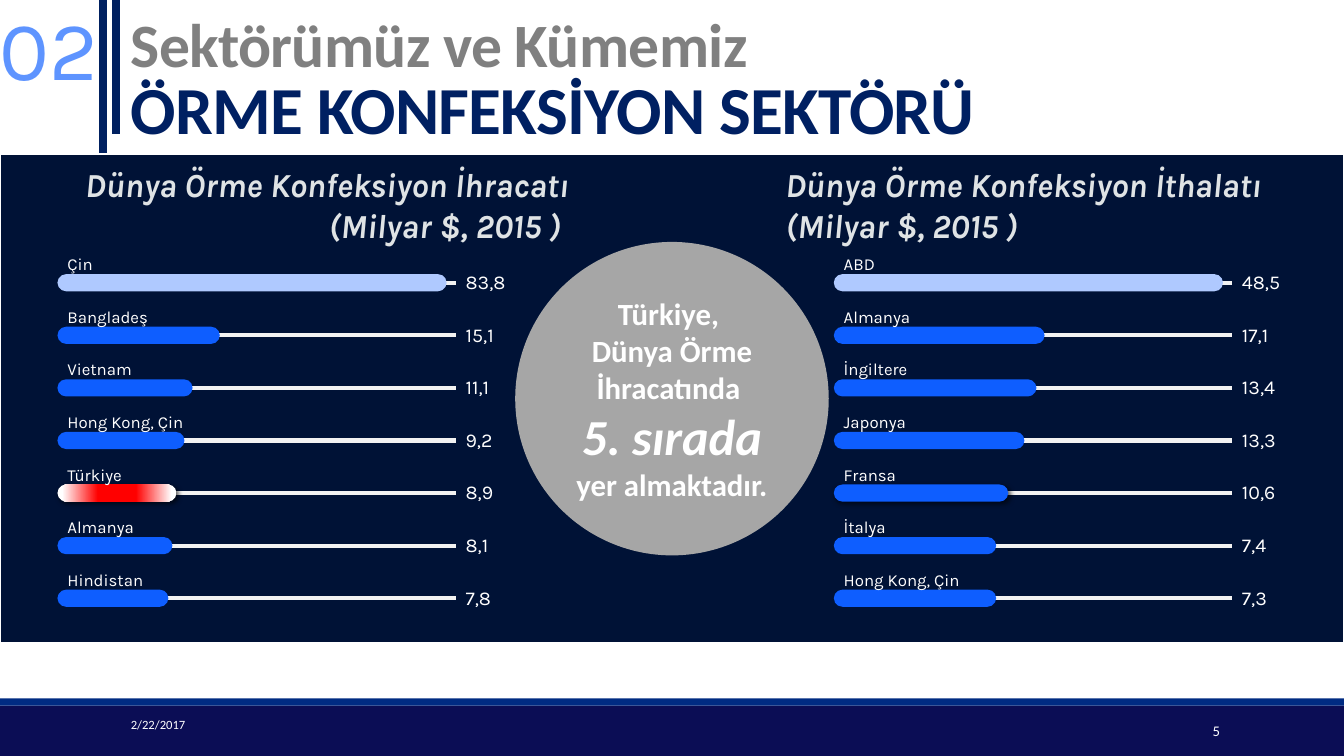
from lxml.etree import SubElement
from pptx import Presentation
from pptx.dml.color import RGBColor
from pptx.enum.shapes import MSO_CONNECTOR, MSO_SHAPE as Preset
from pptx.enum.text import MSO_ANCHOR as Anchor, PP_ALIGN as Align
from pptx.oxml.ns import qn
from pptx.util import Inches, Pt

WHITE, NAVY, BLUE, PALE, RED = "FFFFFF", "002060", "0E5EFF", "AFC9FF", "FF0000"


def color(value):
    return RGBColor.from_string(value)


def add_node(parent, tag, **attributes):
    return SubElement(parent, qn(tag), {key: str(value) for key, value in attributes.items()})


class SlideBuilder:
    body_font = "Calibri"
    chart_font = "Karla"
    row_step = 3.13 / 6
    bar_height = 0.17

    def __init__(self, slide):
        self.slide = slide
        self.canvas = slide.shapes

    def shape(self, preset, box, fill, outline=None):
        figure = self.canvas.add_shape(preset, *map(Inches, box))
        figure.shadow.inherit = False
        figure.fill.solid()
        figure.fill.fore_color.rgb = color(fill)
        if outline:
            figure.line.color.rgb = color(outline)
            figure.line.width = Pt(1.25)
        else:
            figure.line.fill.background()
        return figure

    def line(self, start, end, stroke, width):
        rule = self.canvas.add_connector(MSO_CONNECTOR.STRAIGHT, *map(Inches, start + end))
        rule.line.color.rgb = color(stroke)
        rule.line.width = Pt(width)
        add_node(rule._element.spPr, "a:effectLst")

    def run(self, paragraph, words, size, ink=WHITE, font=None, bold=False, italic=False):
        piece = paragraph.add_run()
        piece.text = words
        piece.font.name = font or self.body_font
        piece.font.size = Pt(size)
        piece.font.color.rgb = color(ink)
        piece.font.bold = bold
        piece.font.italic = italic
        return piece

    def paragraph(self, box, align=Align.LEFT, anchor=Anchor.TOP):
        frame = self.canvas.add_textbox(*map(Inches, box)).text_frame
        frame.word_wrap = True
        frame.vertical_anchor = anchor
        frame.paragraphs[0].alignment = align
        return frame.paragraphs[0]

    def label(self, words, box, size, ink=WHITE, font=None, align=Align.LEFT,
              anchor=Anchor.TOP, emphasis=False):
        paragraph = self.paragraph(box, align, anchor)
        self.run(paragraph, words, size, ink, font, emphasis, emphasis)

    def title(self, topic, sector):
        paragraph = self.paragraph((1.2, 0.02, 11, 1.5), anchor=Anchor.BOTTOM)
        paragraph.line_spacing = 0.85
        heading = self.run(paragraph, topic, 44, "808080", bold=True)
        paragraph.add_line_break()
        subject = self.run(paragraph, sector, 48, "002062", bold=True)
        for piece in (heading, subject):
            piece.font._element.set("spc", "-50")

    def circle(self, box, lines):
        frame = self.shape(Preset.OVAL, box, "A6A6A6").text_frame
        frame.word_wrap = True
        frame.vertical_anchor = Anchor.MIDDLE
        for index, runs in enumerate(lines):
            paragraph = frame.add_paragraph() if index else frame.paragraphs[0]
            paragraph.alignment = Align.CENTER
            for words, size, italic in runs:
                self.run(paragraph, words, size, bold=True, italic=italic)

    def shadow(self, figure):
        effects = figure._element.spPr.find(qn("a:effectLst"))
        outer = add_node(effects, "a:outerShdw", blurRad=Pt(3.5), dist=Pt(2),
                         dir=45 * 60000, algn="tl", rotWithShape=0)
        shade = add_node(outer, "a:srgbClr", val="000000")
        add_node(shade, "a:alpha", val=60000)

    def flag_gradient(self, figure):
        figure.fill.gradient()
        figure.fill.gradient_angle = 0
        stops = figure._element.spPr.find(qn("a:gradFill")).find(qn("a:gsLst"))
        for stop in list(stops):
            stops.remove(stop)
        for position, ink in ((4, WHITE), (34, RED), (66, RED), (96, WHITE)):
            stop = add_node(stops, "a:gs", pos=position * 1000)
            add_node(stop, "a:srgbClr", val=ink)

    def bar_row(self, left, top, country, amount, length, fill, shaded):
        self.canvas = self.slide.shapes.add_group_shape().shapes
        middle = top + self.bar_height / 2
        self.line((left + 0.01, middle), (left + 3.95, middle), "F2F2F2", 3)
        bar = self.shape(Preset.ROUNDED_RECTANGLE, (left, top, length, self.bar_height), fill)
        bar.adjustments[0] = 0.5
        if fill == RED:
            self.flag_gradient(bar)
        if shaded:
            self.shadow(bar)
        self.label(amount, (left + 3.95, top - 0.09, 0.6, 0.34), 14, font=self.chart_font)
        self.label(country, (left, top - 0.25, 1.5, 0.3), 12, font=self.chart_font)
        self.canvas = self.slide.shapes

    def ranking(self, left, heading, heading_left, align, rows):
        for index, (country, amount, length, fill) in enumerate(rows):
            top = 2.72 + index * self.row_step
            self.bar_row(left, top, country, amount, length, fill, index == 4)
        self.label(heading, (heading_left, 1.58, 5.63, 0.91), 24, "DFE3E5",
                   self.chart_font, align, emphasis=True)


EXPORTERS = [
    ("Çin", "83,8", 3.86, PALE),
    ("Bangladeş", "15,1", 1.61, BLUE),
    ("Vietnam", "11,1", 1.34, BLUE),
    ("Hong Kong, Çin", "9,2", 1.26, BLUE),
    ("Türkiye", "8,9", 1.18, RED),
    ("Almanya", "8,1", 1.14, BLUE),
    ("Hindistan", "7,8", 1.1, BLUE),
]
IMPORTERS = [
    ("ABD", "48,5", 3.86, PALE),
    ("Almanya", "17,1", 2.09, BLUE),
    ("İngiltere", "13,4", 2.01, BLUE),
    ("Japonya", "13,3", 1.89, BLUE),
    ("Fransa", "10,6", 1.73, BLUE),
    ("İtalya", "7,4", 1.61, BLUE),
    ("Hong Kong, Çin", "7,3", 1.61, BLUE),
]
RANK_MESSAGE = [
    [("Türkiye, ", 22, False)],
    [("Dünya Örme İhracatında ", 22, False)],
    [("5. sırada ", 36, True), ("yer almaktadır.", 22, False)],
]


def main():
    deck = Presentation()
    deck.slide_width, deck.slide_height = Inches(13.33), Inches(7.5)
    page = SlideBuilder(deck.slides.add_slide(deck.slide_layouts[6]))

    page.shape(Preset.RECTANGLE, (0, 7, 13.33, 0.5), "0B0D55")
    page.shape(Preset.RECTANGLE, (0, 6.93, 13.33, 0.07), "002B82")
    for x, bottom in ((1.15, 1.33), (1.02, 1.81)):
        page.line((x, 0), (x, bottom), NAVY, 6)
    page.label("2/22/2017", (1.2, 6.99, 2.7, 0.4), 9, anchor=Anchor.MIDDLE)
    page.label("5", (10.77, 7.05, 1.43, 0.4), 10.5, align=Align.RIGHT, anchor=Anchor.MIDDLE)
    page.title("Sektörümüz ve Kümemiz ", "ÖRME KONFEKSİYON SEKTÖRÜ")

    page.shape(Preset.RECTANGLE, (0, 1.53, 13.33, 4.85), "001236", WHITE)
    page.circle((5.11, 2.4, 3.11, 3.11), RANK_MESSAGE)
    page.ranking(0.57, "Dünya Örme Konfeksiyon İhracatı (Milyar $, 2015 ) ", 0.11,
                 Align.RIGHT, EXPORTERS)
    page.ranking(8.27, "Dünya Örme Konfeksiyon İthalatı (Milyar $, 2015 )", 7.69,
                 Align.LEFT, IMPORTERS)
    page.label("02", (-0.2, -0.08, 1.27, 1.11), 60, "5E94FF", page.chart_font, Align.RIGHT)
    deck.save("out.pptx")


if __name__ == "__main__":
    main()
